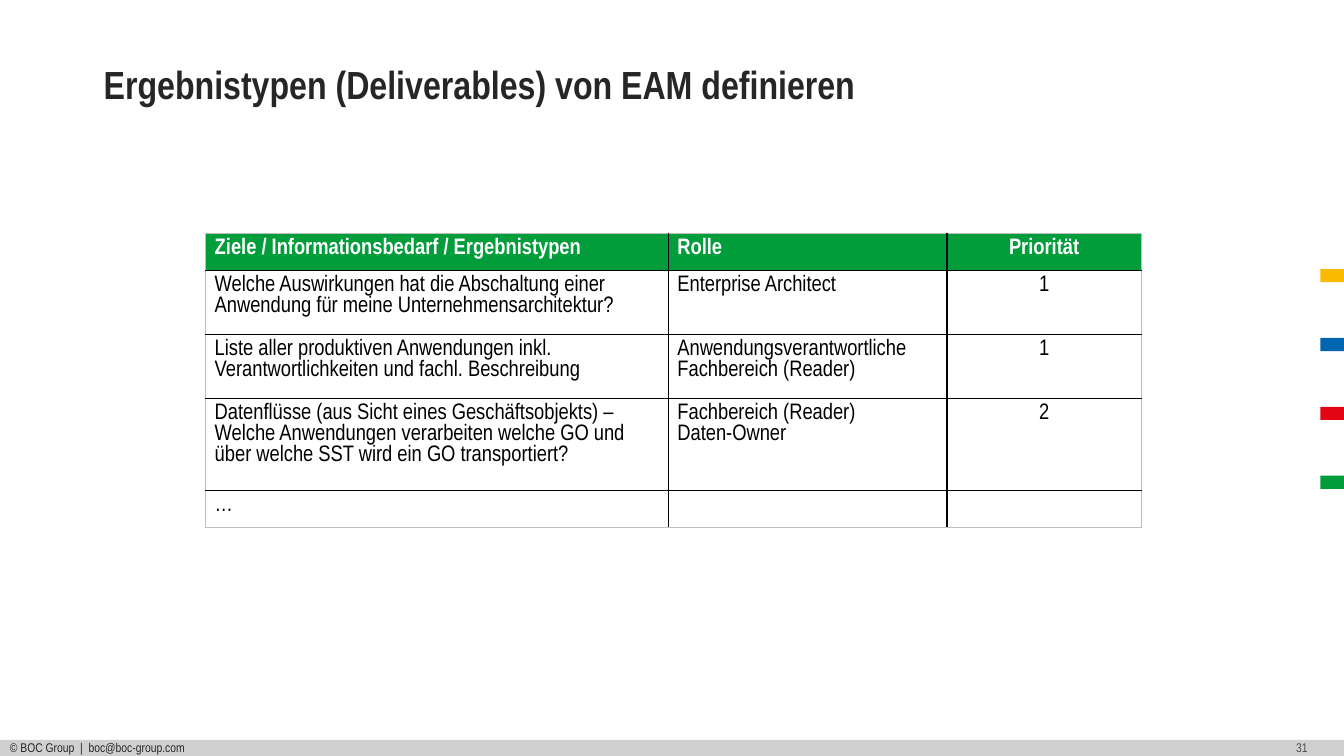
from lxml import etree
from pptx import Presentation
from pptx.dml.color import RGBColor
from pptx.enum import shapes, text
from pptx.oxml.ns import qn
from pptx.util import Pt

# Content
TITLE = "Ergebnistypen (Deliverables) von EAM definieren"
FOOTER = "© BOC Group  |  boc@boc-group.com"
PAGE = "31"
ROWS = [
    ("Ziele / Informationsbedarf / Ergebnistypen", "Rolle", "Priorität"),
    ("Welche Auswirkungen hat die Abschaltung einer Anwendung für meine "
     "Unternehmensarchitektur?", "Enterprise Architect", "1"),
    ("Liste aller produktiven Anwendungen inkl. Verantwortlichkeiten und "
     "fachl. Beschreibung",
     "Anwendungsverantwortliche\nFachbereich (Reader)", "1"),
    ("Datenflüsse (aus Sicht eines Geschäftsobjekts) –\nWelche Anwendungen "
     "verarbeiten welche GO und über welche SST wird ein GO transportiert?",
     "Fachbereich (Reader)\nDaten-Owner", "2"),
    ("…", "", ""),
]
WIDTHS = (330.5, 199.2, 138.7)
HEIGHTS = (26.4, 45.7, 45.7, 65.5, 26.4)

# Theme
THEME = {
    "font": "Arial Narrow", "title": 28, "body": 16, "small": 9,
    "dark": "262626", "grey": "4D4D4D", "bar": "D0D0D0", "edge": "BFBFBF",
    "black": "000000", "white": "FFFFFF", "green": "009D3A",
    "tabs": ("FBBA00", "0066B0", "E30513", "009D3A"),
}
LEFT, MID = text.PP_ALIGN.LEFT, text.PP_ALIGN.CENTER


def color(name):
    return RGBColor.from_string(THEME.get(name, name))


def write(frame, words, size, ink, align=LEFT, bold=False):
    frame.word_wrap = True
    frame.text = words
    for para in frame.paragraphs:
        para.alignment = align
        font = para.font
        font.name, font.size, font.bold = THEME["font"], Pt(THEME[size]), bold
        font.color.rgb = color(ink)


def block(slide, x, y, w, h, fill):
    rect = slide.shapes.add_shape(
        shapes.MSO_SHAPE.RECTANGLE, Pt(x), Pt(y), Pt(w), Pt(h))
    rect.shadow.inherit = False
    rect.fill.solid()
    rect.fill.fore_color.rgb = color(fill)
    rect.line.fill.background()
    return rect


def border(cell, sides):
    props = cell._tc.get_or_add_tcPr()
    for spot, (side, (ink, width)) in enumerate(sides.items()):
        line = etree.Element(qn("a:" + side), w=str(Pt(width)))
        fill = etree.SubElement(line, qn("a:solidFill"))
        etree.SubElement(fill, qn("a:srgbClr"), val=THEME[ink])
        props.insert(spot, line)


def add_grid(slide):
    count, span = len(ROWS), len(WIDTHS)
    grid = slide.shapes.add_table(
        count, span, Pt(146.8), Pt(166.8),
        Pt(sum(WIDTHS)), Pt(sum(HEIGHTS))).table
    for col, width in zip(grid.columns, WIDTHS):
        col.width = Pt(width)
    inner, outer = ("black", 1), ("edge", 0.5)
    for r, (row, height) in enumerate(zip(ROWS, HEIGHTS)):
        grid.rows[r].height = Pt(height)
        for c, words in enumerate(row):
            cell, head = grid.cell(r, c), r == 0
            cell.margin_left = cell.margin_right = Pt(6.6)
            cell.margin_top = cell.margin_bottom = Pt(3.6)
            write(cell.text_frame, words, "body",
                  "white" if head else "black",
                  MID if c == span - 1 else LEFT, head)
            if head:
                cell.fill.solid()
                cell.fill.fore_color.rgb = color("green")
            else:
                cell.fill.background()
            border(cell, {
                "lnL": inner if c else outer,
                "lnR": inner if c < span - 1 else outer,
                "lnT": inner if r else outer,
                "lnB": inner if r < count - 1 else outer,
            })


def main():
    deck = Presentation()
    deck.slide_width, deck.slide_height = Pt(960), Pt(540)
    slide = deck.slides.add_slide(deck.slide_layouts[6])

    # Footer bar and page number
    bar = block(slide, 0, 528.5, 960, 11.5, "bar").text_frame
    bar.margin_top = bar.margin_bottom = 0
    bar.vertical_anchor = text.MSO_ANCHOR.MIDDLE
    write(bar, FOOTER, "small", "dark")
    page = slide.shapes.add_textbox(
        Pt(897), Pt(527), Pt(66), Pt(14.4)).text_frame
    page.margin_top = page.margin_bottom = 0
    page.vertical_anchor = text.MSO_ANCHOR.MIDDLE
    write(page, PAGE, "small", "grey", MID)

    # Colour tabs on the right edge
    for i, fill in enumerate(THEME["tabs"]):
        block(slide, 943.2, 192.2 + 49.2 * i, 16.8, 9.4, fill)

    # Title
    head = slide.shapes.add_textbox(
        Pt(67), Pt(43.2), Pt(828.7), Pt(34.6)).text_frame
    write(head, TITLE, "title", "dark", bold=True)
    head.paragraphs[0].line_spacing = 0.9

    # Table of deliverables
    add_grid(slide)
    deck.save("out.pptx")


if __name__ == "__main__":
    main()
